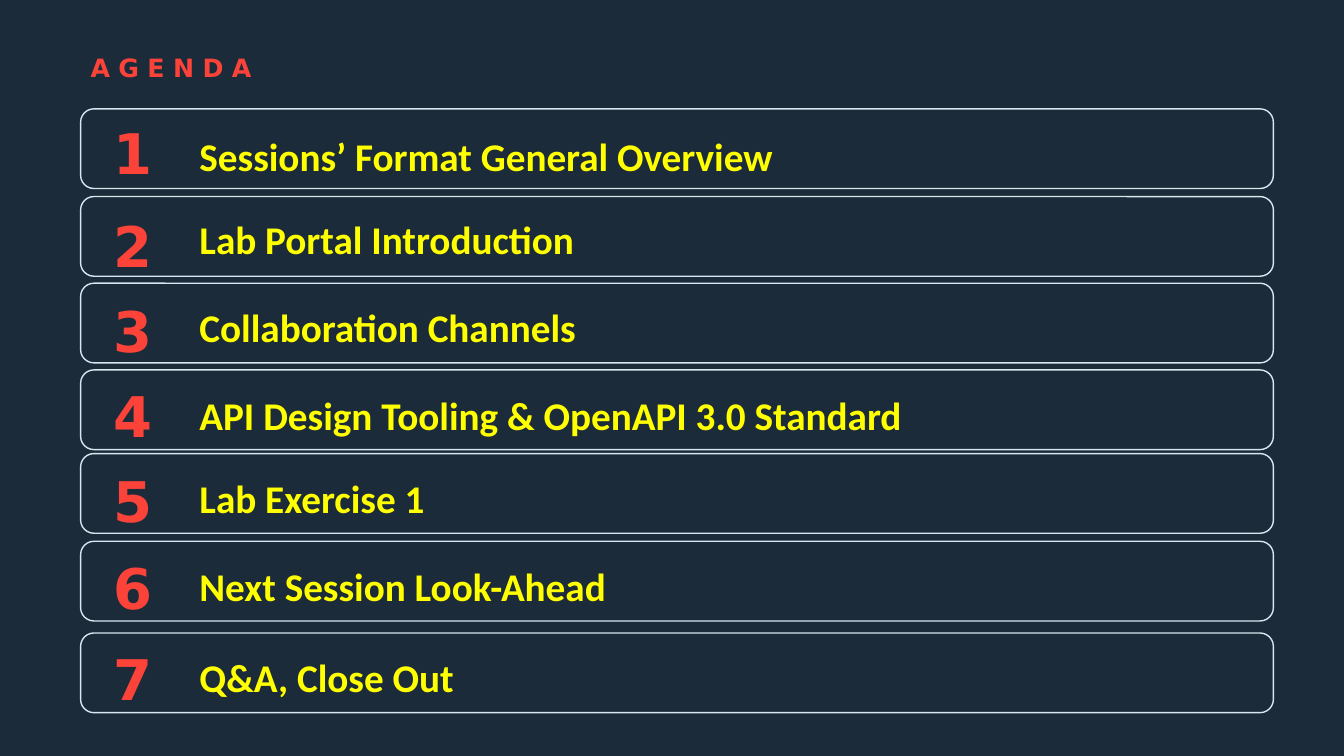
from pptx import Presentation
from pptx import util as u
from pptx.dml import color
from pptx.enum import shapes, text


def paint(target, code):
    target.rgb = color.RGBColor.from_string(code)


def add_label(left, top, width, height, words, size, face, code):
    box = page.shapes.add_textbox(*map(u.Inches, (left, top, width, height)))
    box.text_frame.word_wrap = True
    para = box.text_frame.paragraphs[0]
    para.text = words
    para.font.size = u.Pt(size)
    para.font.name = face
    para.font.bold = True
    paint(para.font.color, code)
    return box


RED, YELLOW, PALE, NAVY = "FB433A", "FFFF00", "D8E6F0", "1C2B39"
MARGIN, ROW_WIDTH, ROW_HEIGHT = 0.8, 11.83, 0.79
NUMBER_LEFT, TITLE_LEFT = 1.03, 1.88

deck = Presentation()
deck.slide_width = u.Inches(13.33)
deck.slide_height = u.Inches(7.5)
page = deck.slides.add_slide(deck.slide_layouts[6])
page.background.fill.solid()
paint(page.background.fill.fore_color, NAVY)

heading = add_label(MARGIN, 0.46, 9.8, 0.46, "AGENDA", 18, "DejaVu Sans", RED)
heading.text_frame.vertical_anchor = text.MSO_ANCHOR.MIDDLE
heading_para = heading.text_frame.paragraphs[0]
heading_para.line_spacing = 0.9
heading_para.runs[0].font._element.set("spc", "600")

agenda = [
    (1.08, 1.13, 1.26, "Sessions’ Format General Overview"),
    (1.95, 2.05, 2.09, "Lab Portal Introduction"),
    (2.81, 2.89, 2.96, "Collaboration Channels"),
    (3.67, 3.74, 3.83, "API Design Tooling & OpenAPI 3.0 Standard"),
    (4.5, 4.58, 4.66, "Lab Exercise 1"),
    (5.37, 5.44, 5.53, "Next Session Look-Ahead"),
    (6.28, 6.35, 6.43, "Q&A, Close Out"),
]

for number, (row_top, number_top, title_top, title) in enumerate(agenda, 1):
    frame = page.shapes.add_shape(
        shapes.MSO_SHAPE.ROUNDED_RECTANGLE,
        *map(u.Inches, (MARGIN, row_top, ROW_WIDTH, ROW_HEIGHT)))
    frame.shadow.inherit = False
    frame.fill.background()
    paint(frame.line.color, PALE)
    frame.line.width = u.Pt(1)
    add_label(NUMBER_LEFT, number_top, 0.61, 0.63, str(number), 40, "DejaVu Sans", RED)
    add_label(TITLE_LEFT, title_top, 8.02, 0.57, title, 28, "Calibri", YELLOW)

deck.save("out.pptx")
